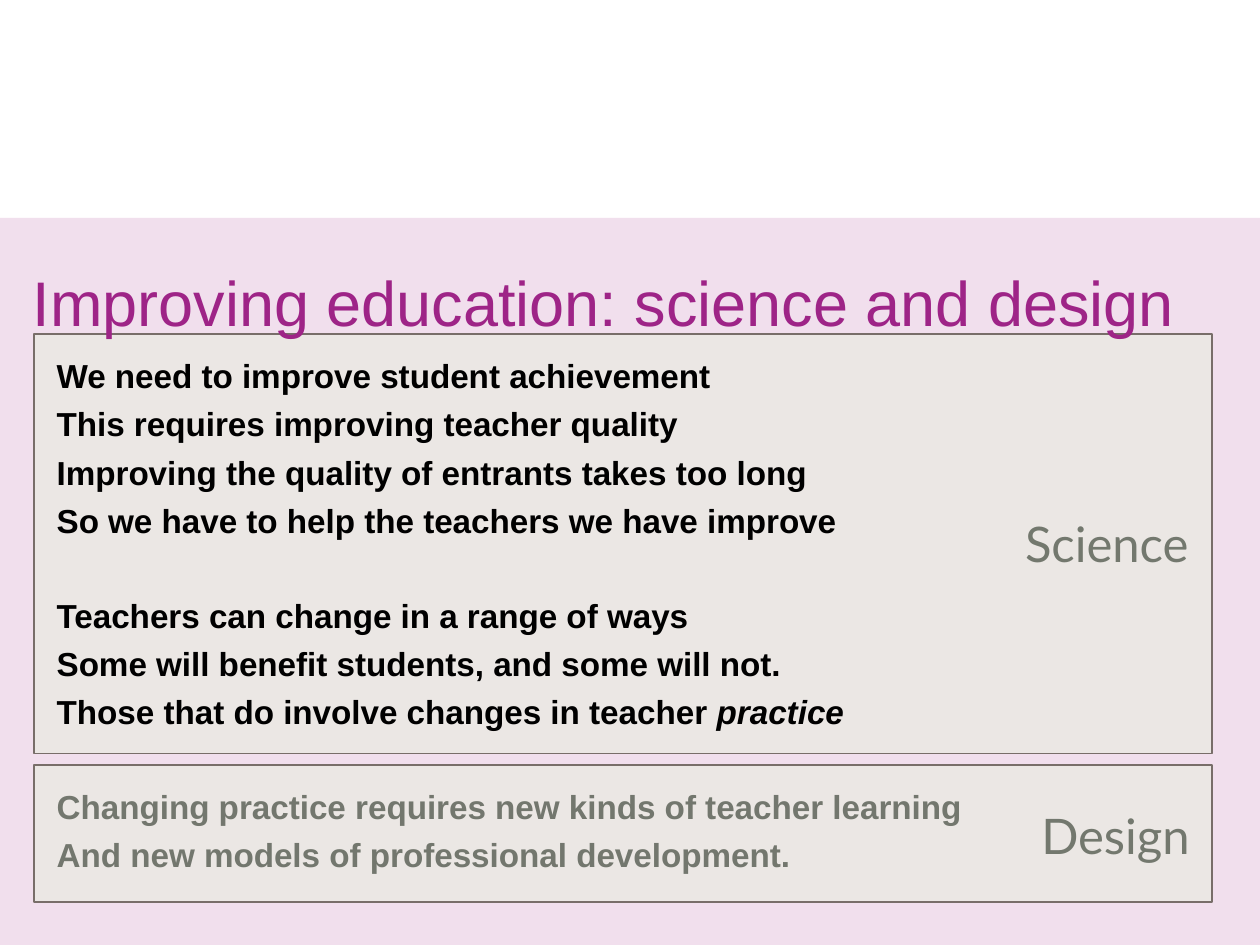
from lxml.etree import SubElement
from pptx import Presentation
from pptx.dml.color import RGBColor
from pptx.enum.shapes import MSO_SHAPE as Shape
from pptx.enum.text import MSO_ANCHOR as Anchor, PP_ALIGN as Align
from pptx.oxml.ns import qn
from pptx.util import Inches, Pt

TITLE = "Improving education: science and design"
STATEMENT_GROUPS = [
    [
        [("We need to improve student achievement", False)],
        [("This requires improving teacher quality", False)],
        [("Improving the quality of entrants takes too long", False)],
        [("So we have to help the teachers we have improve", False)],
    ],
    [
        [("Teachers can change in a range of ways", False)],
        [("Some will benefit students, and some will not.", False)],
        [("Those that do involve changes in teacher ", False), ("practice", True)],
    ],
    [
        [("Changing practice requires new kinds of teacher learning", False)],
        [("And new models of professional development.", False)],
    ],
]
SCIENCE = {"label": "Science", "panel": (0.27, 2.65, 9.35, 3.33), "label_box": (7.85, 4.03, 1.68, 0.57)}
DESIGN = {"label": "Design", "panel": (0.27, 6.07, 9.35, 1.09), "label_box": (7.87, 6.34, 1.67, 0.57)}
LINE_GAP = 4.8
GROUP_GAP = 31.4


def color(value):
    return RGBColor.from_string(value)


def place(*lengths):
    return [Inches(length) for length in lengths]


def add_rectangle(shapes, bounds, fill):
    rectangle = shapes.add_shape(Shape.RECTANGLE, *place(*bounds))
    rectangle.shadow.inherit = False
    rectangle.fill.solid()
    rectangle.fill.fore_color.rgb = color(fill)
    rectangle.line.fill.background()
    return rectangle


def add_span(para, text, size, font, fill, bold=False, italic=False):
    span = para.add_run()
    span.text = text
    span.font.size = Pt(size)
    span.font.name = font
    span.font.bold = bold
    span.font.italic = italic
    span.font.color.rgb = color(fill)


def clear_margins(frame):
    frame.margin_left = frame.margin_top = frame.margin_right = frame.margin_bottom = 0


def add_panel(page, section):
    group = page.shapes.add_group_shape()
    panel = add_rectangle(group.shapes, section["panel"], "E6EFDC")
    fill = panel.fill._xPr.find(qn("a:solidFill"))
    SubElement(fill[0], qn("a:alpha"), val="50000")
    panel.line.color.rgb = color("786E69")
    panel.line.width = Pt(1)
    box = group.shapes.add_textbox(*place(*section["label_box"]))
    box.text_frame.word_wrap = True
    para = box.text_frame.paragraphs[0]
    para.alignment = Align.RIGHT
    add_span(para, section["label"], 28, "Lato", "73786E")


def format_title(page):
    title = page.shapes.title
    page.shapes._spTree.append(title._element)
    title.left, title.top, title.width, title.height = place(0.26, 2.04, 9.74, 0.7)
    frame = title.text_frame
    clear_margins(frame)
    frame.vertical_anchor = Anchor.MIDDLE
    para = frame.paragraphs[0]
    para.alignment = Align.LEFT
    add_span(para, TITLE, 36, "Arial", "9E2487")


def add_statements(page):
    box = page.shapes.add_textbox(*place(0.45, 2.82, 7.34, 4.43))
    frame = box.text_frame
    frame.word_wrap = True
    clear_margins(frame)
    for group_index, group in enumerate(STATEMENT_GROUPS):
        for line_index, statement in enumerate(group):
            if group_index == line_index == 0:
                para = frame.paragraphs[0]
            else:
                para = frame.add_paragraph()
                para.space_before = Pt(LINE_GAP if line_index else GROUP_GAP)
            for text, italic in statement:
                add_span(para, text, 19, "Arial", "000000", True, italic)


def main():
    deck = Presentation()
    deck.slide_width, deck.slide_height = place(10, 7.5)
    page = deck.slides.add_slide(deck.slide_layouts[5])
    add_rectangle(page.shapes, (0, 1.73, 10, 5.77), "F1DFED")
    add_panel(page, SCIENCE)
    format_title(page)
    add_statements(page)
    add_panel(page, DESIGN)
    deck.save("out.pptx")


if __name__ == "__main__":
    main()
